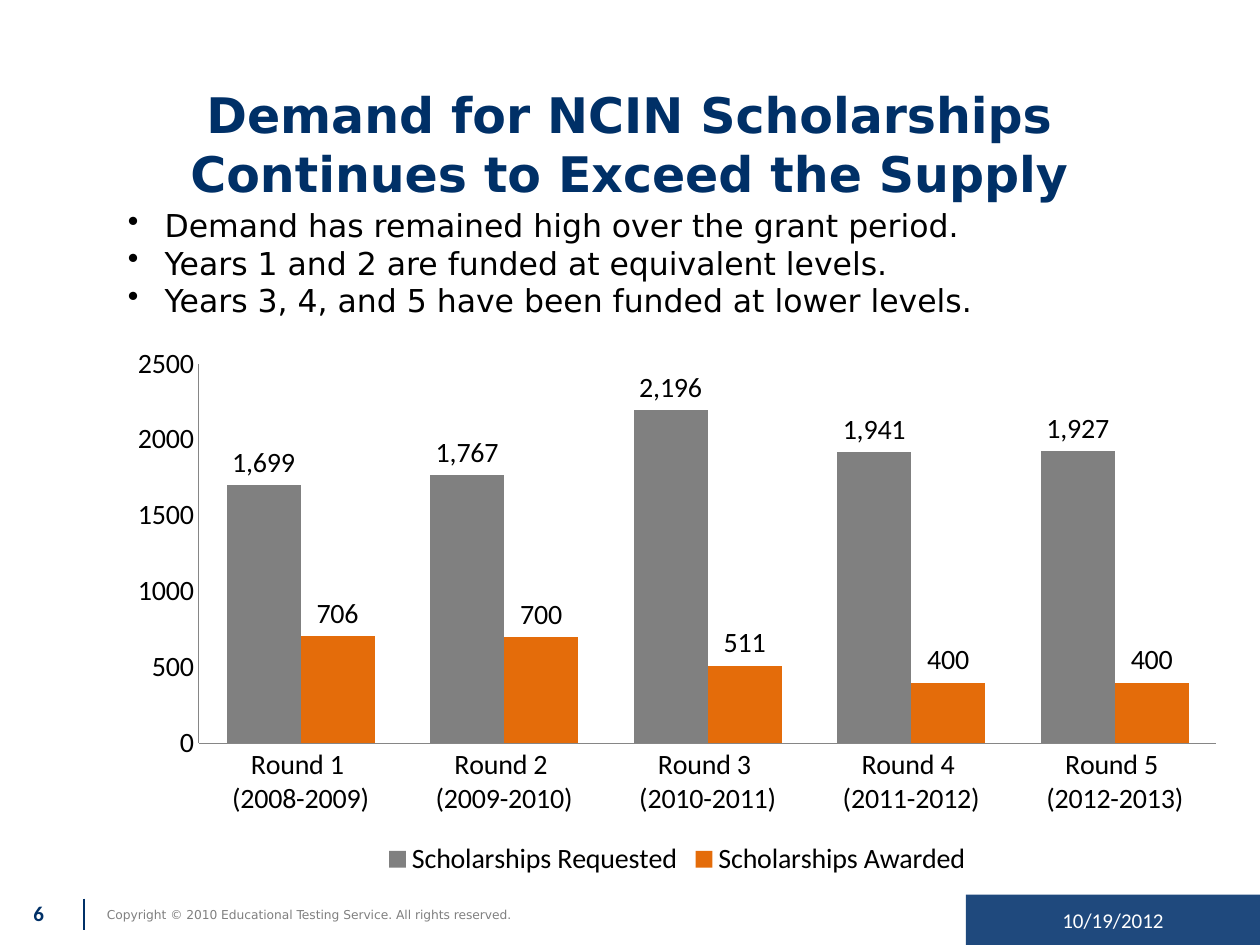
from lxml import etree
from pptx import Presentation
from pptx.chart import data as chart_data
from pptx.dml.color import RGBColor
from pptx.enum import chart as ch, shapes, text
from pptx.oxml import ns
from pptx.util import Pt

COLORS = {"navy": "003067", "blue": "1F497D", "gray": "808080", "orange": "E46C0A",
          "axis": "868686", "black": "000000", "white": "FFFFFF"}
HEADING = "Demand for NCIN Scholarships Continues to Exceed the Supply"
POINTS = [
    "Demand has remained high over the grant period.",
    "Years 1 and 2 are funded at equivalent levels.",
    "Years 3, 4, and 5 have been funded at lower levels.",
]
COPYRIGHT = "Copyright © 2010 Educational Testing Service. All rights reserved."
DATE = "10/19/2012"
PAGE = "6"
FIRST_YEAR = 2008
SERIES = [
    ("Scholarships Requested", "gray", (1699, 1767, 2196, 1921, 1927)),
    ("Scholarships Awarded", "orange", (706, 700, 511, 400, 400)),
]
LABEL_OVERRIDE = (0, 3, "1,941")
INDENT = 21


def rgb(name):
    return RGBColor.from_string(COLORS[name])


def box(left, top, width, height):
    return Pt(left), Pt(top), Pt(width), Pt(height)


def style(font, size, color, face="Calibri", bold=False):
    font.size, font.name, font.bold = Pt(size), face, bold
    font.color.rgb = rgb(color)


def write(frame, content, *, size, color, face="Calibri", bold=False,
          align=text.PP_ALIGN.LEFT, anchor=text.MSO_ANCHOR.TOP, bullet=None):
    frame.word_wrap = True
    frame.vertical_anchor = anchor
    lines = [content] if isinstance(content, str) else content
    for i, line in enumerate(lines):
        paragraph = frame.paragraphs[0] if i == 0 else frame.add_paragraph()
        paragraph.alignment = align
        if bullet:
            props = paragraph._p.get_or_add_pPr()
            props.set("marL", str(Pt(INDENT)))
            props.set("indent", str(-Pt(INDENT)))
            etree.SubElement(props, ns.qn("a:buChar"), char=bullet)
        run = paragraph.add_run()
        run.text = line
        style(run.font, size, color, face, bold)


def add_scholarship_chart(slide):
    data = chart_data.CategoryChartData(number_format="General")
    data.categories = [f"Round {i + 1} \n({FIRST_YEAR + i}-{FIRST_YEAR + i + 1})"
                       for i in range(len(SERIES[0][2]))]
    for name, _, values in SERIES:
        data.add_series(name, values)
    chart = slide.shapes.add_chart(
        ch.XL_CHART_TYPE.COLUMN_CLUSTERED, *box(66, 192, 642, 312), data).chart
    style(chart.font, 16, "black")
    chart.has_title = False
    chart.has_legend = True
    chart.legend.position = ch.XL_LEGEND_POSITION.BOTTOM
    chart.legend.include_in_layout = False

    for axis in (chart.category_axis, chart.value_axis):
        axis.major_tick_mark = axis.minor_tick_mark = ch.XL_TICK_MARK.NONE
        axis.has_major_gridlines = False
        axis.format.line.color.rgb = rgb("axis")
        axis.format.line.width = Pt(0.75)
    chart.value_axis.minimum_scale = 0
    chart.value_axis.maximum_scale = 2500
    chart.value_axis.major_unit = 500

    plot = chart.plots[0]
    plot.gap_width, plot.overlap = 75, 0
    plot.vary_by_categories = False
    for series, (_, color, _) in zip(plot.series, SERIES):
        series.format.fill.solid()
        series.format.fill.fore_color.rgb = rgb(color)
        labels = series.data_labels
        labels.show_value = True
        labels.position = ch.XL_LABEL_POSITION.OUTSIDE_END
        labels.number_format = "#,##0"
        labels.number_format_is_linked = False
        style(labels.font, 16, "black")

    series_index, point_index, shown = LABEL_OVERRIDE
    label = plot.series[series_index].points[point_index].data_label
    write(label.text_frame, shown, size=16, color="black", align=text.PP_ALIGN.CENTER)
    label.position = ch.XL_LABEL_POSITION.OUTSIDE_END


def main():
    deck = Presentation()
    deck.slide_width, deck.slide_height = Pt(720), Pt(540)
    slide = deck.slides.add_slide(deck.slide_layouts[5])
    parts = slide.shapes

    title = parts.title
    title.left, title.top, title.width, title.height = box(29.5, 36, 660, 91.5)
    write(title.text_frame, HEADING, size=28, color="navy", face="DejaVu Sans",
          bold=True, align=text.PP_ALIGN.CENTER, anchor=text.MSO_ANCHOR.MIDDLE)

    summary = parts.add_textbox(*box(66, 114, 600, 72.7))
    write(summary.text_frame, POINTS, size=18, color="black", face="DejaVu Sans", bullet="•")

    add_scholarship_chart(slide)

    notice = parts.add_textbox(*box(54, 514.8, 450, 15.8))
    write(notice.text_frame, COPYRIGHT, size=7, color="gray", face="DejaVu Sans")

    divider = parts.add_connector(shapes.MSO_CONNECTOR.STRAIGHT,
                                  Pt(48), Pt(513.5), Pt(48), Pt(531.5))
    divider.line.color.rgb = rgb("navy")
    divider.line.width = Pt(0.75)
    etree.SubElement(divider._element.spPr, ns.qn("a:effectLst"))

    date = parts.add_shape(shapes.MSO_SHAPE.RECTANGLE, *box(552, 511.2, 168, 28.8))
    date.shadow.inherit = False
    date.fill.solid()
    date.fill.fore_color.rgb = rgb("blue")
    date.line.fill.background()
    write(date.text_frame, DATE, size=12, color="white",
          align=text.PP_ALIGN.CENTER, anchor=text.MSO_ANCHOR.MIDDLE)

    page = parts.add_textbox(*box(12, 511.2, 36, 23))
    write(page.text_frame, PAGE, size=12, color="navy", bold=True)

    deck.save("out.pptx")


if __name__ == "__main__":
    main()
